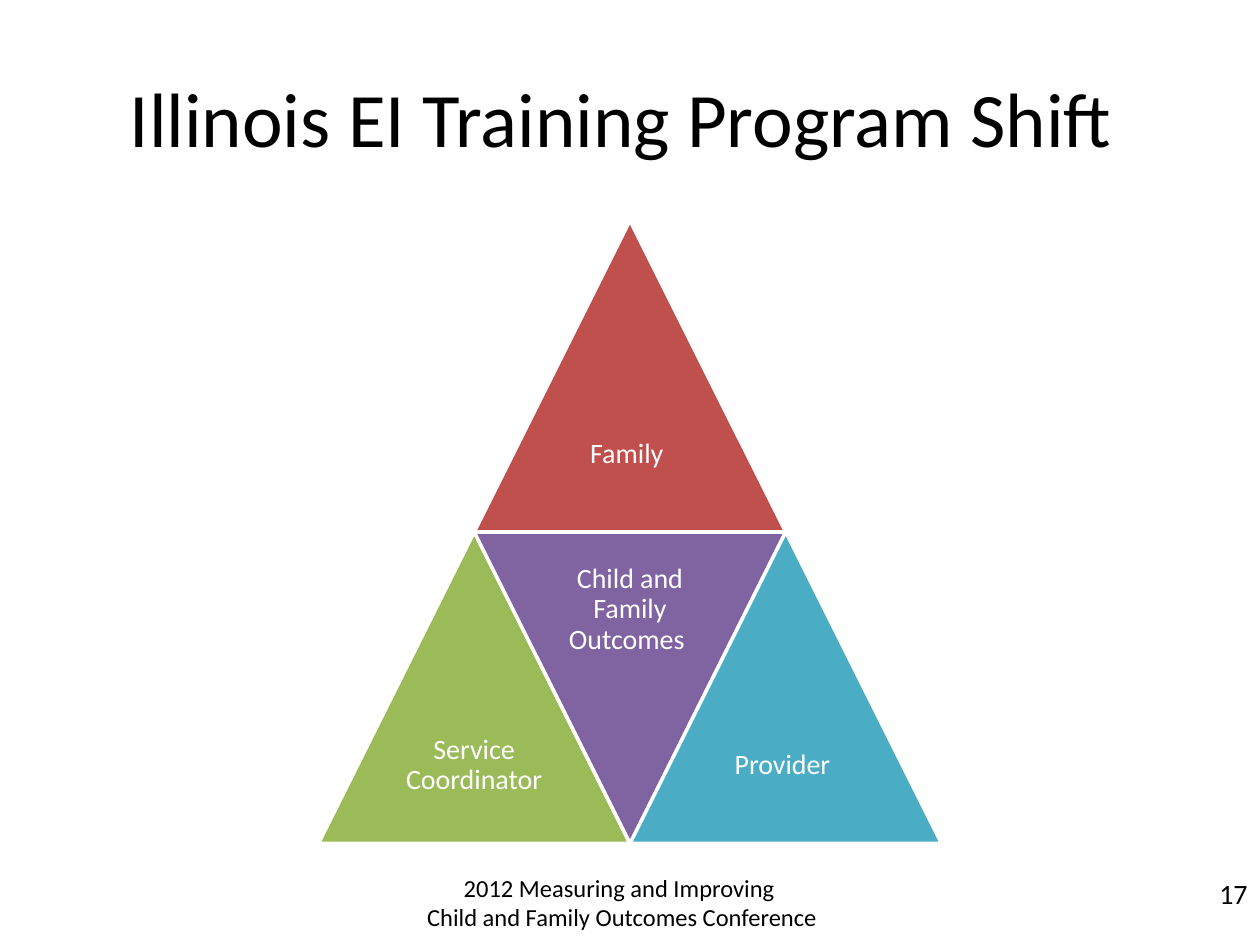
"""Build a slide with a triangle of four parts around child and family outcomes."""
from dataclasses import dataclass

from pptx import Presentation
from pptx import util as u
from pptx.dml.color import RGBColor
from pptx.enum import shapes, text

FONT = "Calibri"
BLACK, WHITE = "000000", "FFFFFF"
SIDE = 178
HALF, QUARTER = SIDE / 2, SIDE / 4
CENTER, TOP = 360, 126
MIDDLE = TOP + SIDE


@dataclass
class Label:
    content: str
    left: float
    top: float
    width: float
    height: float
    size: float
    color: str = BLACK
    align: text.PP_ALIGN = text.PP_ALIGN.CENTER
    inset: float | None = None
    line_spacing: float = 1.0


@dataclass
class Part:
    content: str
    left: float
    top: float
    color: str
    inverted: bool = False


LABELS = [
    Label("Illinois EI Training Program Shift ", 36, 21.6, 648, 90, 44),
    Label("2012 Measuring and Improving\v Child and Family Outcomes Conference",
          162, 498.2, 383.8, 34.6, 14),
    Label("17", 654, 498.2, 66, 24, 16, align=text.PP_ALIGN.RIGHT),
]
PARTS = [
    Part("Family ", CENTER - HALF, TOP, "C0504D"),
    Part("Service Coordinator", CENTER - SIDE, MIDDLE, "9BBB59"),
    Part("Child and Family Outcomes ", CENTER - HALF, MIDDLE, "8064A2", True),
    Part("Provider ", CENTER, MIDDLE, "4BACC6"),
]


def rgb(color: str) -> RGBColor:
    return RGBColor.from_string(color)


def draw_label(container, label: Label) -> None:
    box = container.add_textbox(u.Pt(label.left), u.Pt(label.top),
                                u.Pt(label.width), u.Pt(label.height))
    frame = box.text_frame
    frame.word_wrap = True
    frame.vertical_anchor = text.MSO_ANCHOR.MIDDLE
    if label.inset is not None:
        frame.margin_left = frame.margin_right = u.Pt(label.inset)
        frame.margin_top = frame.margin_bottom = u.Pt(label.inset)
    paragraph = frame.paragraphs[0]
    paragraph.text = label.content
    paragraph.alignment = label.align
    paragraph.line_spacing = label.line_spacing
    for run in paragraph.runs:
        run.font.name = FONT
        run.font.size = u.Pt(label.size)
        run.font.color.rgb = rgb(label.color)


def draw_part(container, part: Part) -> None:
    triangle = container.add_shape(shapes.MSO_SHAPE.ISOSCELES_TRIANGLE,
                                   u.Pt(part.left), u.Pt(part.top), u.Pt(SIDE), u.Pt(SIDE))
    triangle.rotation = 180 if part.inverted else 0
    triangle.shadow.inherit = False
    triangle.fill.solid()
    triangle.fill.fore_color.rgb = rgb(part.color)
    triangle.line.color.rgb = rgb(WHITE)
    triangle.line.width = u.Pt(2)
    label_top = part.top if part.inverted else part.top + HALF
    draw_label(container, Label(part.content, part.left + QUARTER, label_top, HALF, HALF,
                                16, WHITE, inset=4.8, line_spacing=0.9))


def main() -> None:
    presentation = Presentation()
    presentation.slide_width, presentation.slide_height = u.Pt(720), u.Pt(540)
    slide = presentation.slides.add_slide(presentation.slide_layouts[6])
    pyramid = slide.shapes.add_group_shape()
    for part in PARTS:
        draw_part(pyramid.shapes, part)
    for label in LABELS:
        draw_label(slide.shapes, label)
    presentation.save("out.pptx")


if __name__ == "__main__":
    main()
